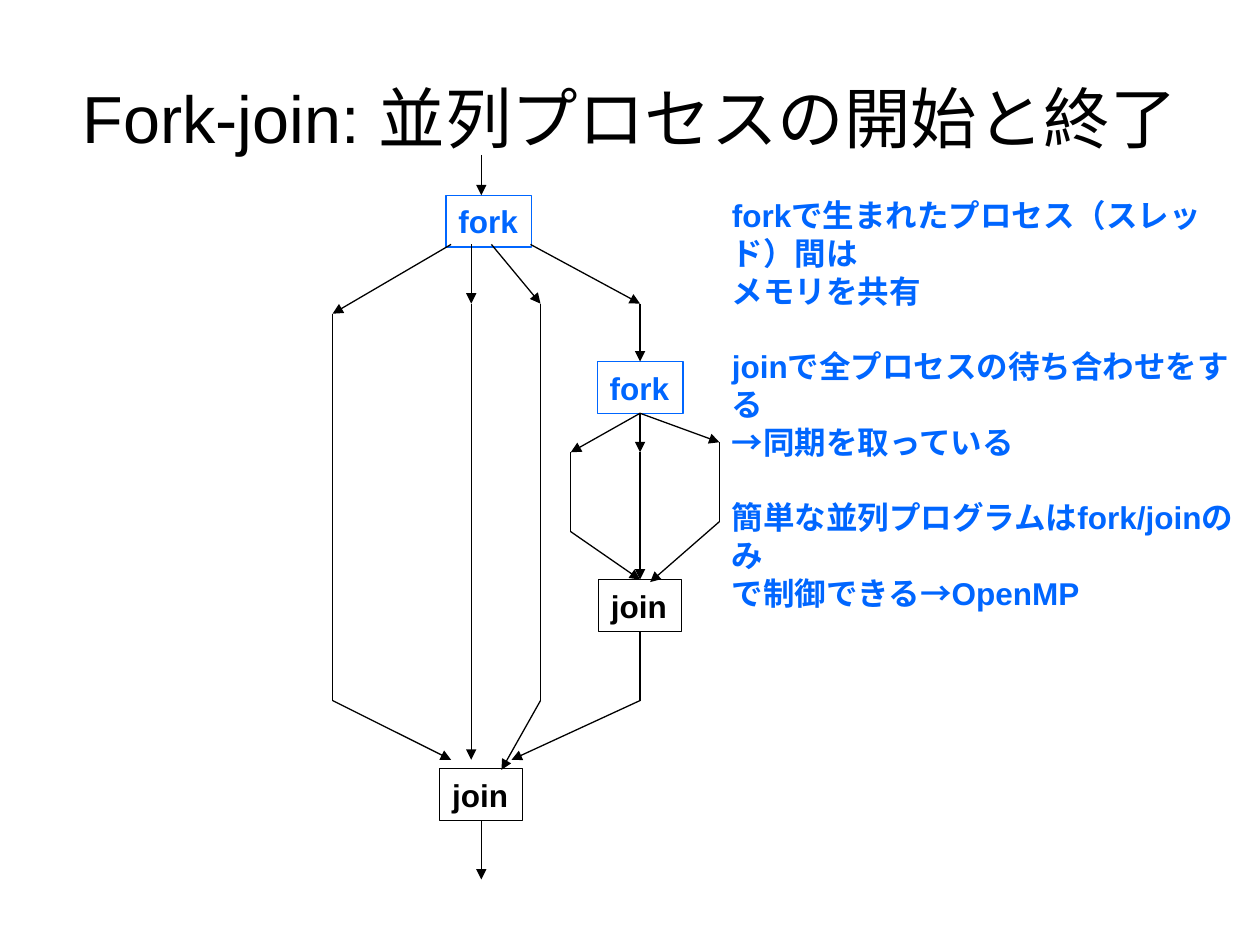
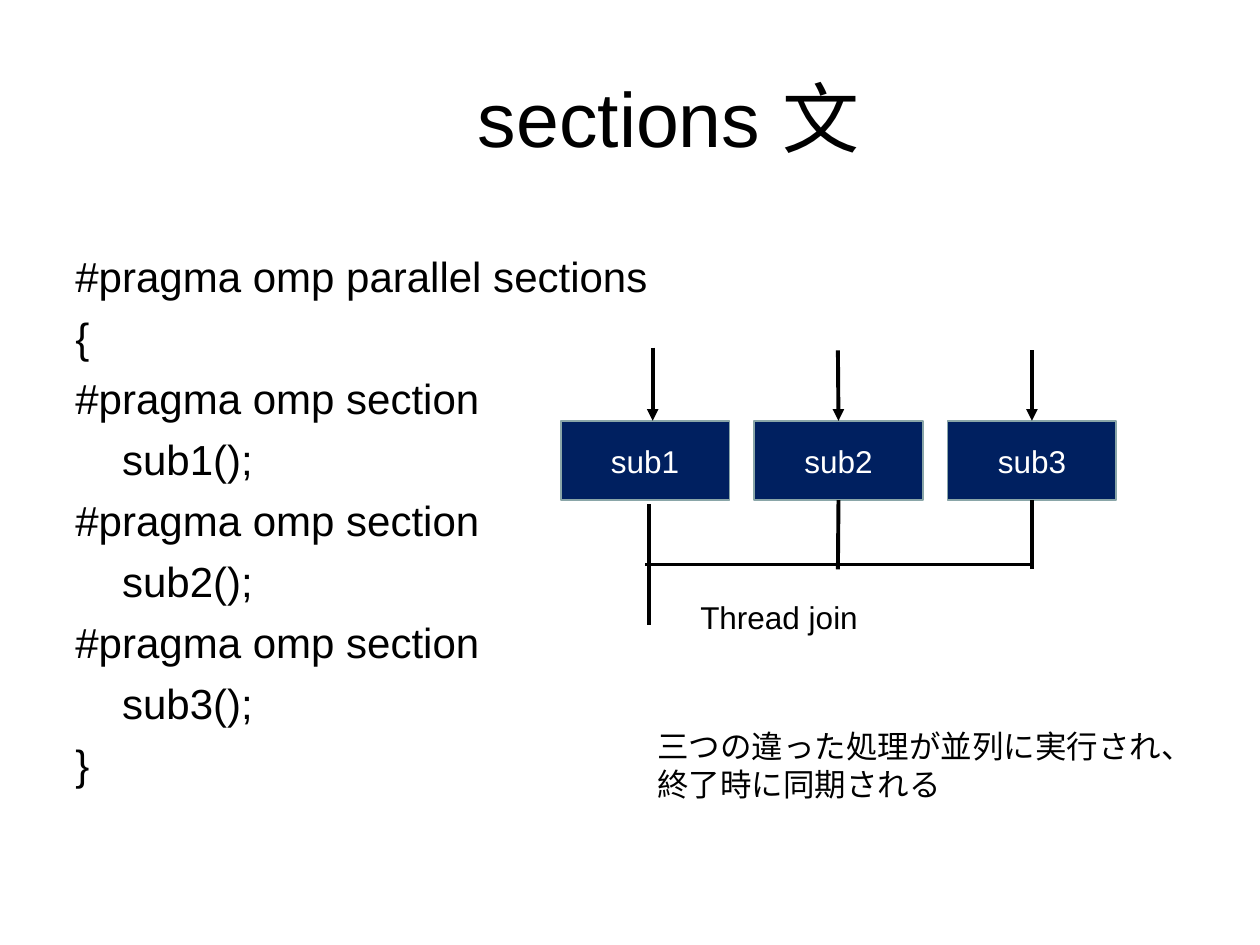
from itertools import pairwise

from lxml import etree
from pptx import Presentation
from pptx.dml.color import RGBColor
from pptx.enum.shapes import MSO_CONNECTOR, MSO_SHAPE
from pptx.enum.text import MSO_ANCHOR, MSO_AUTO_SIZE, PP_ALIGN
from pptx.oxml.ns import qn
from pptx.util import Inches, Pt

STRAIGHT = MSO_CONNECTOR.STRAIGHT
RECTANGLE = MSO_SHAPE.RECTANGLE
TOP, MIDDLE = MSO_ANCHOR.TOP, MSO_ANCHOR.MIDDLE
LEFT, CENTER = PP_ALIGN.LEFT, PP_ALIGN.CENTER
NO_AUTOFIT = MSO_AUTO_SIZE.NONE

BLACK = RGBColor(0x00, 0x00, 0x00)
WHITE = RGBColor(0xFF, 0xFF, 0xFF)
BLUE = RGBColor(0x00, 0x66, 0xFF)
NAVY = RGBColor(0x00, 0x20, 0x60)
GRAY_TEAL = RGBColor(0x8A, 0xA6, 0xA8)

FONT = "Arial"
TITLE_ONLY = 5
TOP_SIDE, BOTTOM_SIDE = 0, 2
TITLE_BOX = (0.5, 0.3, 9, 1.25)


def inches(*lengths):
    return [Inches(length) for length in lengths]


def write(shape, lines, size=18, color=BLACK, bold=False, align=LEFT,
          anchor=TOP, wrap=True, gaps=None, indents=None):
    frame = shape.text_frame
    frame.word_wrap = wrap
    frame.auto_size = NO_AUTOFIT
    frame.vertical_anchor = anchor
    for index, line in enumerate(lines):
        paragraph = frame.paragraphs[0] if index == 0 else frame.add_paragraph()
        paragraph.alignment = align
        if gaps and index in gaps:
            paragraph.space_before = Pt(gaps[index])
        if indents and index in indents:
            paragraph._p.get_or_add_pPr().set("marL", str(Inches(indents[index])))
        run = paragraph.add_run()
        run.text = line
        run.font.name = FONT
        run.font.size = Pt(size)
        run.font.bold = bold
        run.font.color.rgb = color


def add_text(slide, box, lines, **text_format):
    write(slide.shapes.add_textbox(*inches(*box)), lines, **text_format)


def add_titled_slide(deck, title, size):
    slide = deck.slides.add_slide(deck.slide_layouts[TITLE_ONLY])
    heading = slide.shapes.title
    heading.left, heading.top, heading.width, heading.height = inches(*TITLE_BOX)
    write(heading, [title], size=size, align=CENTER, anchor=MIDDLE)
    return slide


def add_node(slide, box, label, line, line_width=0.75, fill=None, **text_format):
    node = slide.shapes.add_shape(RECTANGLE, *inches(*box))
    node.shadow.inherit = False
    if fill is None:
        node.fill.background()
    else:
        node.fill.solid()
        node.fill.fore_color.rgb = fill
    node.line.color.rgb = line
    node.line.width = Pt(line_width)
    write(node, [label], anchor=MIDDLE, **text_format)
    return node


def add_link(slide, origin, start, end, width=0.75, arrow=False):
    def place(point):
        if isinstance(point[0], (int, float)):
            return inches(origin[0] + point[0], origin[1] + point[1])
        return [0, 0]

    link = slide.shapes.add_connector(STRAIGHT, *place(start), *place(end))
    for point, connect in ((start, link.begin_connect), (end, link.end_connect)):
        if not isinstance(point[0], (int, float)):
            connect(*point)
    link.line.color.rgb = BLACK
    link.line.width = Pt(width)
    if arrow:
        etree.SubElement(link.line._get_or_add_ln(), qn("a:tailEnd"), type="triangle")
    etree.SubElement(link._element.spPr, qn("a:effectLst"))


def add_thread(slide, origin, points, arrows=(True, False, True)):
    for (start, end), arrow in zip(pairwise(points), arrows):
        add_link(slide, origin, start, end, arrow=arrow)


def draw_fork_join(slide, left, top):
    origin = (left, top)

    def add_step(x, y, label):
        color, width = (BLUE, 0.68) if label == "fork" else (BLACK, 0.66)
        return add_node(slide, (left + x, top + y, width, 0.41), label, color,
                        color=color, bold=True, wrap=False)

    add_step(0.9, 0.32, "fork")
    inner_fork = add_step(2.1, 1.64, "fork")
    inner_join = add_step(2.11, 3.37, "join")
    outer_join = add_step(0.85, 4.87, "join")

    add_link(slide, origin, (1.18, 0), (1.18, 0.32), arrow=True)
    for start_x, lane_x, lane_top, end in (
            (0.94, 0, 1.26, (0.94, 4.8)),
            (1.1, 1.1, 1.18, (1.1, 4.8)),
            (1.26, 1.65, 1.18, (1.34, 4.88))):
        add_thread(slide, origin,
                   [(start_x, 0.71), (lane_x, lane_top), (lane_x, 4.33), end])

    add_thread(slide, origin,
               [(1.57, 0.71), (2.44, 1.18), (inner_fork, TOP_SIDE)], (True, True))
    for lane_x, lane_top, end in (
            (1.89, 2.36, (inner_join, TOP_SIDE)),
            (2.44, 2.36, (inner_join, TOP_SIDE)),
            (3.07, 2.28, (2.52, 3.39))):
        add_thread(slide, origin, [(inner_fork, BOTTOM_SIDE), (lane_x, lane_top),
                                   (lane_x, lane_top + 0.63), end])
    add_thread(slide, origin,
               [(inner_join, BOTTOM_SIDE), (2.44, 4.33), (1.42, 4.8)], (False, True))
    add_link(slide, origin, (outer_join, BOTTOM_SIDE), (1.18, 5.75), arrow=True)


def draw_sections(slide, left, top):
    origin = (left, top)
    boxes = [add_node(slide, (left + 1.535 * column, top + 0.58, 1.34, 0.63),
                      f"sub{column + 1}", GRAY_TEAL, line_width=1, fill=NAVY,
                      color=WHITE, align=CENTER)
             for column in range(3)]
    add_link(slide, origin, (0.73, 0), (0.73, 0.58), 2.25, arrow=True)
    add_link(slide, origin, (0.7, 1.24), (0.7, 2.2), 2.25)
    for box, x in zip(boxes[1:], (2.2, 3.74)):
        add_link(slide, origin, (x, 0.02), (box, TOP_SIDE), 2.25, arrow=True)
        add_link(slide, origin, (box, BOTTOM_SIDE), (x, 1.76), 2.25)
    add_link(slide, origin, (3.74, 1.72), (0.67, 1.72), 2.25)
    add_text(slide, (left + 1.01, top + 1.94, 1.46, 0.4), ["Thread join"], wrap=False)


def build_fork_join_slide(deck):
    slide = add_titled_slide(deck, "Fork-join: 並列プロセスの開始と終了", 38)
    draw_fork_join(slide, 2.64, 1.23)
    add_text(slide, (5.71, 1.51, 4.35, 3.5), [
        "forkで生まれたプロセス（スレッド）間は",
        "メモリを共有",
        "joinで全プロセスの待ち合わせをする",
        "→同期を取っている",
        "簡単な並列プログラムはfork/joinのみ",
        "で制御できる→OpenMP",
    ], color=BLUE, bold=True, gaps={2: 21.5, 4: 21.5})


def build_sections_slide(deck):
    slide = add_titled_slide(deck, "　sections 文", 44)
    code = ["#pragma omp parallel sections", "{"]
    for number in range(1, 4):
        code += ["#pragma omp section", f"sub{number}();"]
    code.append("}")
    add_text(slide, (0.5, 1.94, 5.05, 4.41), code, size=24,
             gaps={row: 6 for row in range(1, len(code))},
             indents={row: 0.37 for row in (3, 5, 7)})
    draw_sections(slide, 4.45, 2.76)
    add_text(slide, (5.12, 5.72, 4.26, 1),
             ["三つの違った処理が並列に実行され、", "終了時に同期される"])


def main():
    deck = Presentation()
    deck.slide_width, deck.slide_height = inches(10, 7.5)
    build_fork_join_slide(deck)
    build_sections_slide(deck)
    deck.save("out.pptx")


if __name__ == "__main__":
    main()
